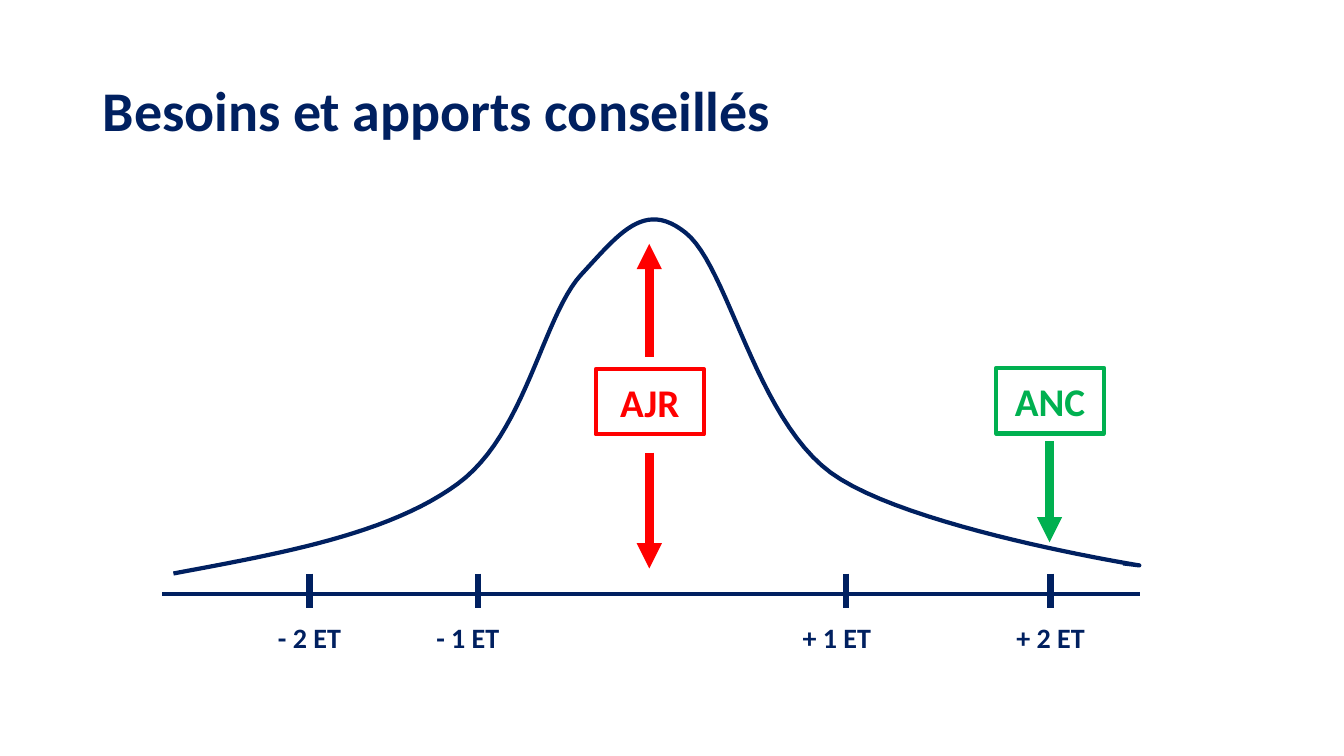
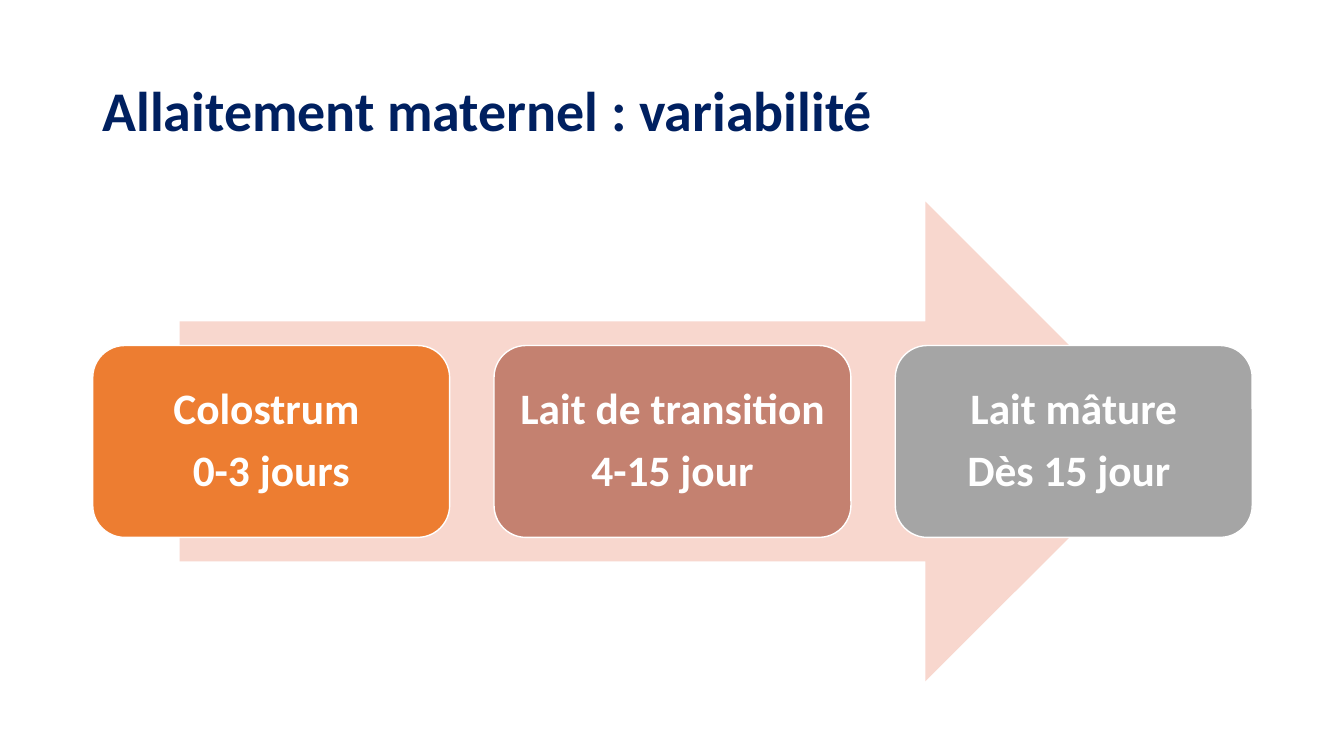
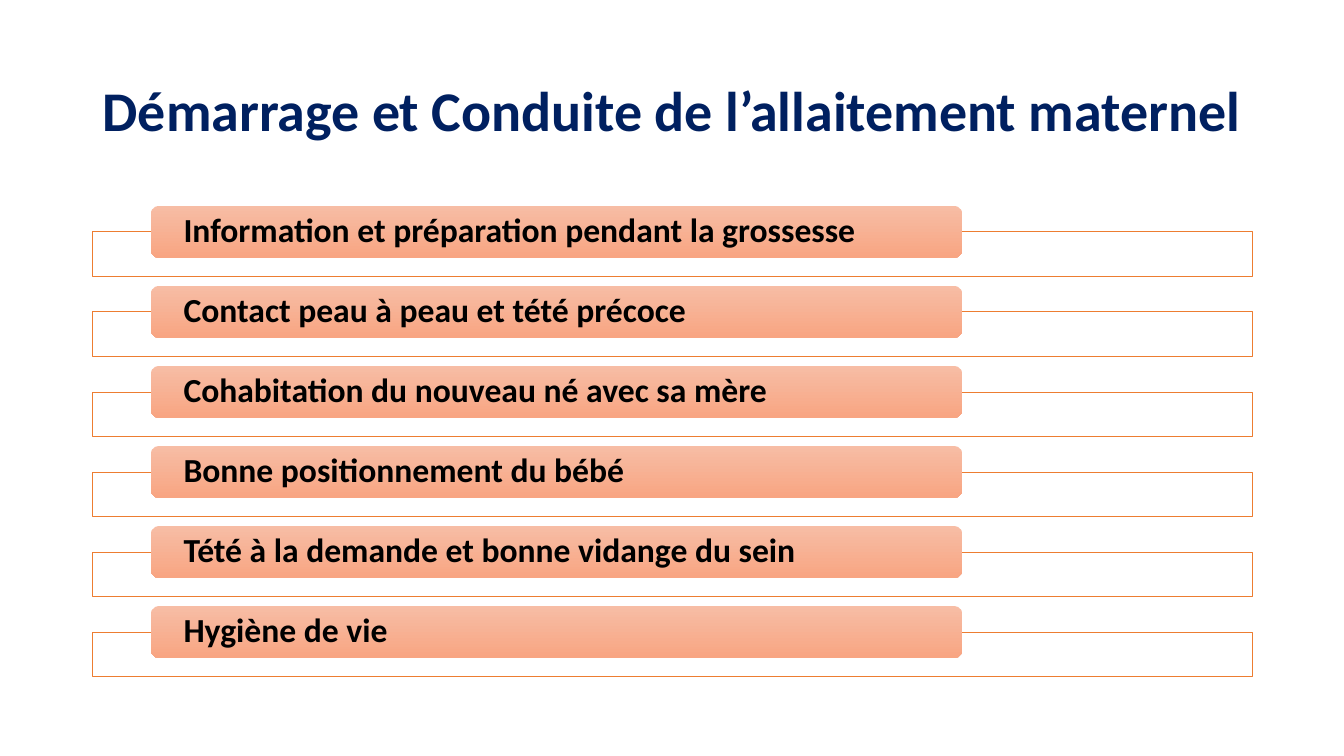
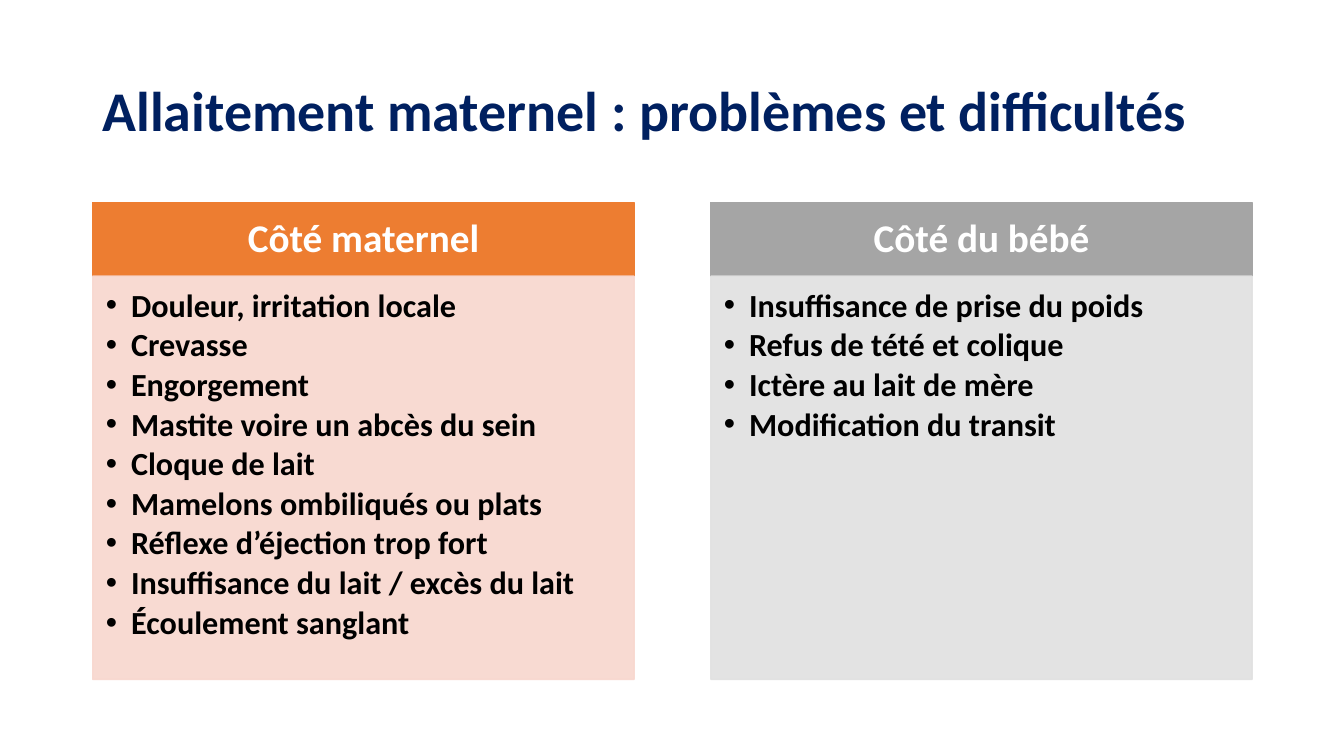
from lxml import etree
from pptx import Presentation
from pptx.dml.color import RGBColor
from pptx.enum import shapes, text
from pptx.oxml import ns
from pptx.util import Inches, Pt

COLORS = {
    "navy": "002060", "red": "FF0000", "green": "00B050", "white": "FFFFFF",
    "black": "000000", "orange": "ED7D31", "clay": "C48170", "gray": "A5A5A5",
    "blush": "F8D7CE", "pale_gray": "E1E1E1",
    "peach_top": "F7BDA5", "peach_bottom": "F8A582",
}
FONT = "Calibri"
TITLE_BOX = (0.92, 0.4, 11.5, 1.45)
BODY_BOX = (0.92, 2.01, 11.5, 4.73)
CENTER = text.PP_ALIGN.CENTER
LEFT = text.PP_ALIGN.LEFT
MIDDLE = text.MSO_ANCHOR.MIDDLE
TOP = text.MSO_ANCHOR.TOP
RECTANGLE = shapes.MSO_SHAPE.RECTANGLE
ROUNDED = shapes.MSO_SHAPE.ROUNDED_RECTANGLE


def rgb(name):
    return RGBColor.from_string(COLORS[name])


def add_child(parent, tag, **attributes):
    return etree.SubElement(parent, ns.qn(tag), attributes)


def style_shape(shape, fill=None, line=None, width=1):
    shape.shadow.inherit = False
    if fill:
        shape.fill.solid()
        shape.fill.fore_color.rgb = rgb(fill)
    else:
        shape.fill.background()
    if line:
        shape.line.color.rgb = rgb(line)
        shape.line.width = Pt(width)
    else:
        shape.line.fill.background()


def add_box(slide, kind, box, fill=None, line=None, width=1):
    shape = slide.shapes.add_shape(kind, *map(Inches, box))
    style_shape(shape, fill, line, width)
    return shape


def set_opacity(shape, percent):
    for color in shape._element.spPr.iter(ns.qn("a:srgbClr")):
        add_child(color, "a:alpha", val=str(percent * 1000))


def write(shape, lines, size, color, align=LEFT, anchor=MIDDLE,
          insets=(0.1, 0.05, 0.1, 0.05), spacing=None, gap=0, bullets=False):
    frame = shape.text_frame
    frame.word_wrap = True
    frame.vertical_anchor = anchor
    (frame.margin_left, frame.margin_top,
     frame.margin_right, frame.margin_bottom) = map(Inches, insets)
    for index, line in enumerate(lines):
        paragraph = frame.paragraphs[0] if index == 0 else frame.add_paragraph()
        paragraph.text = line
        paragraph.alignment = align
        if spacing:
            paragraph.line_spacing = spacing
        if index < len(lines) - 1:
            paragraph.space_after = Pt(gap)
        if bullets:
            properties = paragraph._p.get_or_add_pPr()
            properties.set("marL", str(Inches(0.25)))
            properties.set("indent", str(-Inches(0.25)))
            add_child(properties, "a:buFont", typeface="Arial")
            add_child(properties, "a:buChar", char="•")
        font = paragraph.font
        font.name = FONT
        font.size = Pt(size)
        font.bold = True
        font.color.rgb = rgb(color)


def add_line(slide, start, end, color, width, arrow=False):
    connector = slide.shapes.add_connector(
        shapes.MSO_CONNECTOR.STRAIGHT, *map(Inches, (*start, *end)))
    connector.line.color.rgb = rgb(color)
    connector.line.width = Pt(width)
    if arrow:
        add_child(connector.line._get_or_add_ln(), "a:tailEnd", type="triangle")
    add_child(connector._element.spPr, "a:effectLst")


def add_title_slide(presentation, title):
    slide = presentation.slides.add_slide(presentation.slide_layouts[6])
    title_box = slide.shapes.add_textbox(*map(Inches, TITLE_BOX))
    write(title_box, [title], 40, "navy", spacing=0.9)
    return slide


def bezier_points(start, curves, steps=24):
    points = [start]
    for first, second, end in curves:
        begin = points[-1]
        for step in range(1, steps + 1):
            t = step / steps
            weights = ((1 - t) ** 3, 3 * t * (1 - t) ** 2, 3 * t * t * (1 - t), t ** 3)
            points.append(tuple(
                sum(weight * value for weight, value in zip(weights, values))
                for values in zip(begin, first, second, end)))
    return points


def add_bell_curve(slide, left, top):
    curves = [
        ((1.18, 3.31), (2.25, 3.12), (2.93, 2.62)),
        ((3.6, 2.13), (3.77, 0.97), (4.15, 0.55)),
        ((4.53, 0.14), (4.78, -0.2), (5.19, 0.13)),
        ((5.61, 0.46), (5.88, 1.96), (6.63, 2.51)),
        ((7.38, 3.06), (9.69, 3.43), (9.69, 3.43)),
    ]
    points = bezier_points((0.11, 3.51), curves) + [(9.53, 3.41)]
    placed = [(Inches(left + x), Inches(top + y)) for x, y in points]
    builder = slide.shapes.build_freeform(*placed[0])
    builder.add_line_segments(placed[1:], close=False)
    style_shape(builder.convert_to_shape(), line="navy", width=3)


def add_axis(slide, left, top, width):
    add_line(slide, (left, top), (left + width, top), "navy", 3)
    ticks = [("- 2 ET", 1.46, 1.46), ("- 1 ET", 3.13, 3.03),
             ("+ 1 ET", 6.78, 6.69), ("+ 2 ET", 8.81, 8.81)]
    for label, tick, center in ticks:
        x = left + tick
        add_line(slide, (x, top - 0.2), (x, top + 0.14), "navy", 4.5)
        box = (left + center - 0.45, top + 0.18, 0.9, 0.5)
        write(slide.shapes.add_textbox(*map(Inches, box)), [label], 20, "navy",
              CENTER, insets=(0, 0.05, 0, 0.05))


def add_marker(slide, label, color, center, top, arrows, fill=None):
    box = (center - 0.53, top, 1.07, 0.65)
    write(add_box(slide, RECTANGLE, box, fill, color, 3), [label], 28, color, CENTER)
    for start, end in arrows:
        add_line(slide, (center, top + start), (center, top + end), color, 6, arrow=True)


def add_distribution(slide, left, top, width):
    add_axis(slide, left, top + 3.71, width)
    add_bell_curve(slide, left, top)
    add_marker(slide, "ANC", "green", left + 8.8, top + 1.47, [(0.73, 1.73)])
    add_marker(slide, "AJR", "red", left + 4.83, top + 1.48,
               [(0.83, 1.98), (-0.12, -1.24)], "white")


def add_process(slide, box, steps):
    left, top, width, height = box
    arrow_width = width * 0.85
    add_box(slide, shapes.MSO_SHAPE.RIGHT_ARROW,
            (left + (width - arrow_width) / 2, top, arrow_width, height), "blush")
    card_width, card_height = 3.54, height * 0.4
    pitch = (width - card_width) / (len(steps) - 1)
    for index, (fill, lines) in enumerate(steps):
        card = add_box(slide, ROUNDED,
                       (left + index * pitch, top + (height - card_height) / 2,
                        card_width, card_height), fill, "white")
        write(card, lines, 31, "white", CENTER, insets=(0.1, 0.13, 0.1, 0.13),
              spacing=0.9, gap=10.5)


def add_stacked_list(slide, box, items):
    left, top, width, height = box
    pill_height, frame_offset, frame_height = 0.52, 0.26, 0.44
    pitch = (height - frame_offset - frame_height) / (len(items) - 1)
    for index, item in enumerate(items):
        y = top + index * pitch
        add_box(slide, RECTANGLE, (left, y + frame_offset, width, frame_height),
                "white", "orange", 0.5)
        pill = add_box(slide, ROUNDED, (left + width * 0.05, y, width * 0.7, pill_height))
        pill.fill.gradient()
        pill.fill.gradient_angle = 270
        for stop, color in zip(pill.fill.gradient_stops, ("peach_top", "peach_bottom")):
            stop.color.rgb = rgb(color)
        write(pill, [item], 24, "black", insets=(0.3, 0, 0.3, 0), spacing=0.9)


def add_columns(slide, box, columns):
    left, top, width, height = box
    column_width, header_height = 5.37, 0.73
    pitch = (width - column_width) / (len(columns) - 1)
    for index, (heading, fill, tint, items) in enumerate(columns):
        x = left + index * pitch
        header = add_box(slide, RECTANGLE, (x, top, column_width, header_height), fill, fill)
        write(header, [heading], 28, "white", CENTER,
              insets=(0.22, 0.12, 0.22, 0.12), spacing=0.9)
        panel = add_box(slide, RECTANGLE,
                        (x, top + header_height, column_width, height - header_height),
                        tint, tint)
        set_opacity(panel, 90)
        write(panel, items, 23, "black", anchor=TOP, insets=(0.13, 0.13, 0.18, 0.2),
              spacing=0.9, gap=3.5, bullets=True)


def main():
    presentation = Presentation()
    presentation.slide_width = Inches(13.33)
    presentation.slide_height = Inches(7.5)

    slide = add_title_slide(presentation, "Besoins et apports conseillés")
    add_distribution(slide, 1.61, 2.18, 9.7)

    slide = add_title_slide(presentation, "Allaitement maternel : variabilité")
    add_process(slide, (0.92, 2, 11.5, 4.76), [
        ("orange", ["Colostrum ", "0-3 jours"]),
        ("clay", ["Lait de transition", "4-15 jour"]),
        ("gray", ["Lait mâture", "Dès 15 jour "]),
    ])

    slide = add_title_slide(presentation, "Démarrage et Conduite de l’allaitement maternel")
    add_stacked_list(slide, (0.92, 2.04, 11.5, 4.67), [
        "Information et préparation pendant la grossesse",
        "Contact peau à peau et tété précoce",
        "Cohabitation du nouveau né avec sa mère",
        "Bonne positionnement du bébé",
        "Tété à la demande et bonne vidange du sein",
        "Hygiène de vie",
    ])

    slide = add_title_slide(presentation, "Allaitement maternel : problèmes et difficultés")
    add_columns(slide, BODY_BOX, [
        ("Côté maternel", "orange", "blush", [
            "Douleur, irritation locale",
            "Crevasse",
            "Engorgement",
            "Mastite voire un abcès du sein",
            "Cloque de lait",
            "Mamelons ombiliqués ou plats",
            "Réflexe d’éjection trop fort",
            "Insuffisance du lait / excès du lait",
            "Écoulement sanglant",
        ]),
        ("Côté du bébé", "gray", "pale_gray", [
            "Insuffisance de prise du poids",
            "Refus de tété et colique",
            "Ictère au lait de mère",
            "Modification du transit",
        ]),
    ])

    presentation.save("out.pptx")


if __name__ == "__main__":
    main()
